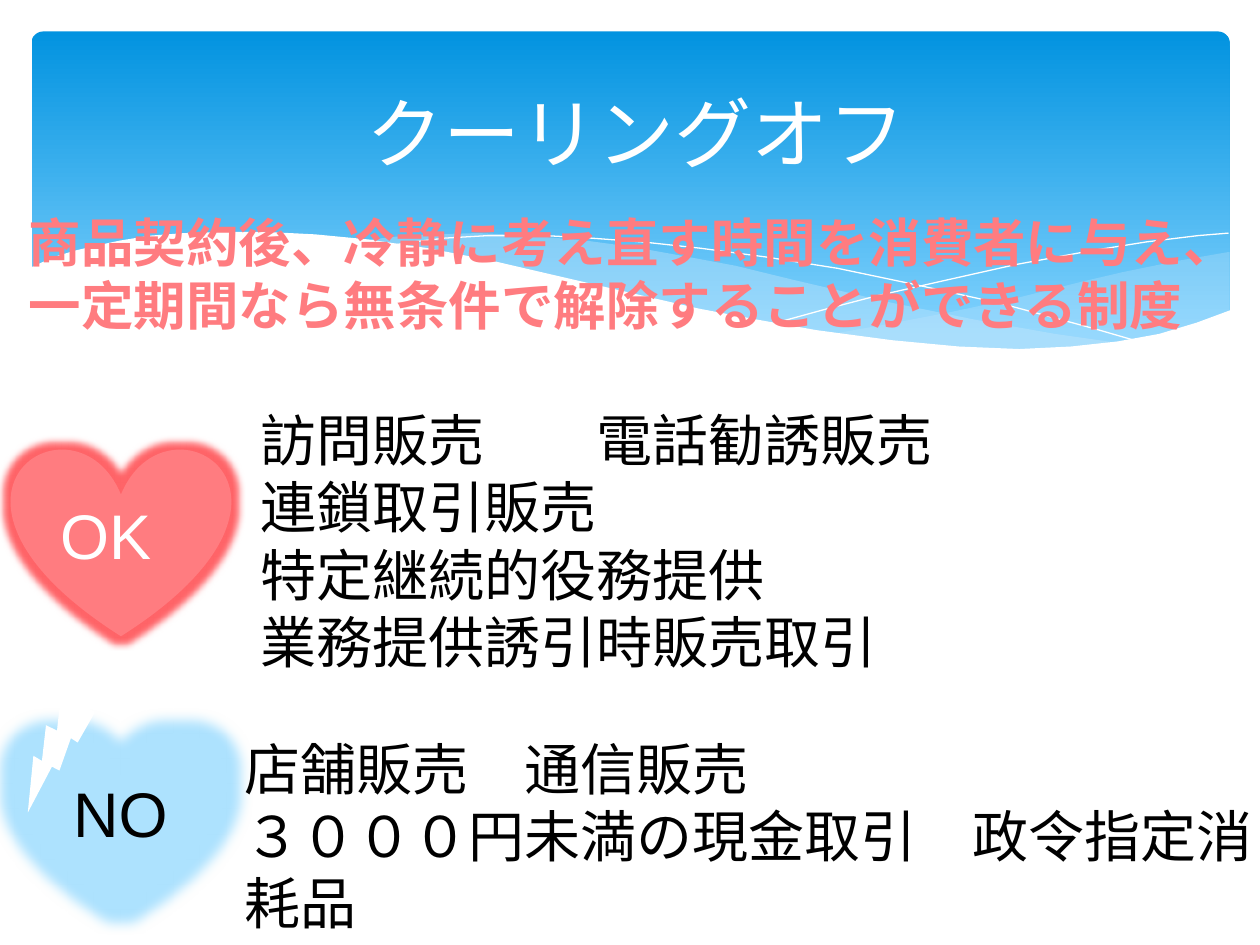
import pptx
import pptx.dml.color
import pptx.enum.dml
import pptx.enum.shapes
import pptx.enum.text
import pptx.oxml
import pptx.oxml.ns
import pptx.util

COLUMNS, ROWS = 100, 75
CELL = pptx.util.Inches(0.1)
STEPS = 10
LATIN, JAPANESE = "Cabin", "Noto Sans CJK JP"
WHITE, BLACK, PINK, SKY, PALE = "FFFFFF", "000000", "FF7C80", "ADE2FE", "C6E7FC"
SHAPES = pptx.enum.shapes.MSO_SHAPE
ALIGN = pptx.enum.text.PP_ALIGN
ANCHOR = pptx.enum.text.MSO_ANCHOR

RIGHT_WAVE = [
    (97.5, 20), (93.5, 20.7), (89.1, 21.6), (86.1, 22.3), (80.5, 23.7),
    (75.3, 24.8), (70.6, 25.7), (66.1, 26.5), (70.5, 27.1), (74.5, 27.5),
    (78.1, 27.7), (81.4, 27.8), (85.4, 27.6), (88.9, 27.2), (92.1, 26.5),
    (94.9, 25.7), (97.6, 24.7), (97.6, 20),
]
MIDDLE_WAVE = [
    (89.3, 27.3), (83.7, 26.5), (77.5, 25.4), (70.6, 24), (62.9, 22.2),
    (58.4, 21.1), (54.1, 20.3), (50.2, 19.6), (46.5, 19.1), (42, 18.7),
    (38, 18.5), (34.4, 18.6), (31.3, 18.8), (28.6, 19.1), (32.3, 19.6),
    (36.2, 20.3), (40.4, 21.1), (44.9, 22.2), (53, 24), (60.1, 25.5),
    (65, 26.4), (69.5, 27), (73.6, 27.5), (77.3, 27.7), (80.7, 27.8),
    (84.8, 27.7), (87.6, 27.5),
]
LONG_CURVE = [
    (30.9, 19.5), (32.8, 19.2), (35.3, 18.9), (38.7, 18.7), (43.3, 18.7),
    (46.9, 18.9), (51, 19.2), (55.6, 19.7), (60.8, 20.4), (66.5, 21.3),
    (72.7, 22.6), (79.5, 24.1), (86.9, 26.1), (90.7, 27.2),
]
SHORT_CURVE = [
    (61.3, 25.7), (65.3, 24.6), (69.5, 23.5), (74.8, 22.3), (80.6, 21),
    (86.6, 19.9), (91, 19.2), (95.1, 18.7), (97.5, 18.5),
]
WHITE_WAVE = [
    (97.7, 24.6), (95, 25.6), (92, 26.5), (88.7, 27.1), (85, 27.5),
    (80.9, 27.7), (76.1, 27.5), (70.8, 27), (64.8, 26.2), (60.3, 25.4),
    (55.5, 24.5), (50.3, 23.3), (44.7, 22), (39.1, 20.7), (34, 19.7),
    (29.2, 19), (25, 18.6), (21.1, 18.4), (17.7, 18.4), (14.6, 18.5),
    (11.9, 18.7), (9.5, 19.1), (7.6, 19.5), (5.9, 19.9), (4.6, 20.3),
    (3.6, 20.7), (2.3, 21.3), (2.3, 32.9), (97.7, 32.9),
]


def color(value):
    return pptx.dml.color.RGBColor.from_string(value)


def cells(*values):
    return [int(round(value * CELL)) for value in values]


def paint(shape, fill):
    shape.shadow.inherit = False
    shape.fill.solid()
    shape.fill.fore_color.rgb = color(fill)
    shape.line.fill.background()


def write(shape, lines, size, fill, font=LATIN, bold=False,
          align=ALIGN.LEFT, anchor=ANCHOR.TOP):
    frame = shape.text_frame
    frame.word_wrap = True
    frame.auto_size = pptx.enum.text.MSO_AUTO_SIZE.NONE
    frame.vertical_anchor = anchor
    frame.text = "\n".join(lines)
    for paragraph in frame.paragraphs:
        paragraph.alignment = align
        for run in paragraph.runs:
            run.font.size = pptx.util.Pt(size)
            run.font.name = font
            run.font.bold = bold
            run.font.color.rgb = color(fill)
            properties = run.font._element
            east_asian = pptx.oxml.parse_xml(
                f'<a:ea {pptx.oxml.ns.nsdecls("a")} typeface="{JAPANESE}"/>')
            properties.find(pptx.oxml.ns.qn("a:latin")).addnext(east_asian)


def add_banner(slide, box):
    banner = slide.shapes.add_shape(SHAPES.ROUNDED_RECTANGLE, *cells(*box))
    banner.adjustments[0] = 0.01
    banner.adjustments[0] = 0.034
    banner.shadow.inherit = False
    banner.line.fill.background()
    banner.fill.gradient()
    banner.fill.gradient_angle = 270
    stops = [(0, "0293E0"), (0.9, "83D3FE")]
    for stop, (position, value) in zip(banner.fill.gradient_stops, stops):
        stop.position = position
        stop.color.rgb = color(value)


def add_outline(slide, points, closed):
    steps = [(column * STEPS, row * STEPS) for column, row in points]
    builder = slide.shapes.build_freeform(*steps[0], scale=CELL / STEPS)
    builder.add_line_segments(steps[1:], close=closed)
    return builder.convert_to_shape()


def add_wave(slide, points, fill, opacity=100):
    wave = add_outline(slide, points, True)
    paint(wave, fill)
    if opacity < 100:
        value = wave.element.spPr.find(".//" + pptx.oxml.ns.qn("a:srgbClr"))
        value.append(pptx.oxml.parse_xml(
            f'<a:alpha {pptx.oxml.ns.nsdecls("a")} val="{opacity * 1000}"/>'))


def add_curve(slide, points):
    curve = add_outline(slide, points, False)
    curve.shadow.inherit = False
    curve.fill.background()
    curve.line.color.rgb = color(WHITE)
    curve.line.width = pptx.util.Pt(0)


def add_heart(slide, box, fill, glow, radius, label, text_color, align):
    heart = slide.shapes.add_shape(SHAPES.HEART, *cells(*box))
    paint(heart, fill)
    effects = heart.element.spPr.find(pptx.oxml.ns.qn("a:effectLst"))
    effects.append(pptx.oxml.parse_xml(
        f'<a:glow {pptx.oxml.ns.nsdecls("a")} rad="{pptx.util.Pt(radius)}">'
        f'<a:srgbClr val="{glow}"/></a:glow>'))
    write(heart, [label], 36, text_color, "Arial", align=align, anchor=ANCHOR.MIDDLE)


def add_bolt(slide, box, rotation):
    bolt = slide.shapes.add_shape(SHAPES.LIGHTNING_BOLT, *cells(*box))
    bolt.rotation = rotation
    paint(bolt, WHITE)


def add_text(slide, box, lines, size, fill, font=LATIN, bold=False):
    write(slide.shapes.add_textbox(*cells(*box)), lines, size, fill, font, bold)


def place_title(slide, box, text):
    title = slide.shapes.title
    title.left, title.top, title.width, title.height = cells(*box)
    write(title, [text], 44, WHITE, align=ALIGN.CENTER, anchor=ANCHOR.MIDDLE)
    title.element.getparent().append(title.element)


def main():
    presentation = pptx.Presentation()
    presentation.slide_width, presentation.slide_height = cells(COLUMNS, ROWS)
    slide = presentation.slides.add_slide(presentation.slide_layouts[5])

    add_banner(slide, (2.5, 2.5, 95.1, 27))
    add_wave(slide, RIGHT_WAVE, PALE, 29)
    add_wave(slide, MIDDLE_WAVE, PALE, 40)
    add_curve(slide, LONG_CURVE)
    add_curve(slide, SHORT_CURVE)
    add_wave(slide, WHITE_WAVE, WHITE)
    place_title(slide, (5.5, 3.6, 90, 13.7), "クーリングオフ")

    add_heart(slide, (0.9, 35.5, 17.4, 15), PINK, "FF6468", 8, "OK", WHITE, ALIGN.LEFT)
    add_heart(slide, (1.1, 58, 16.9, 14.2), SKY, SKY, 14, "NO", BLACK, ALIGN.CENTER)
    add_bolt(slide, (0.8, 55, 6.8, 8.7), 59.2)

    add_text(slide, (19.7, 31.7, 79, 22.6), [
        "訪問販売　　電話勧誘販売",
        "連鎖取引販売",
        "特定継続的役務提供",
        "業務提供誘引時販売取引",
    ], 32, BLACK)
    add_text(slide, (18.4, 57.8, 86.2, 11.8), [
        "店舗販売　通信販売",
        "３０００円未満の現金取引　政令指定消耗品",
    ], 32, BLACK)
    add_text(slide, (1.3, 16.2, 99.1, 11.1), [
        "商品契約後、冷静に考え直す時間を消費者に与え、",
        "一定期間なら無条件で解除することができる制度",
    ], 30, PINK, JAPANESE, True)
    presentation.save("out.pptx")


if __name__ == "__main__":
    main()
